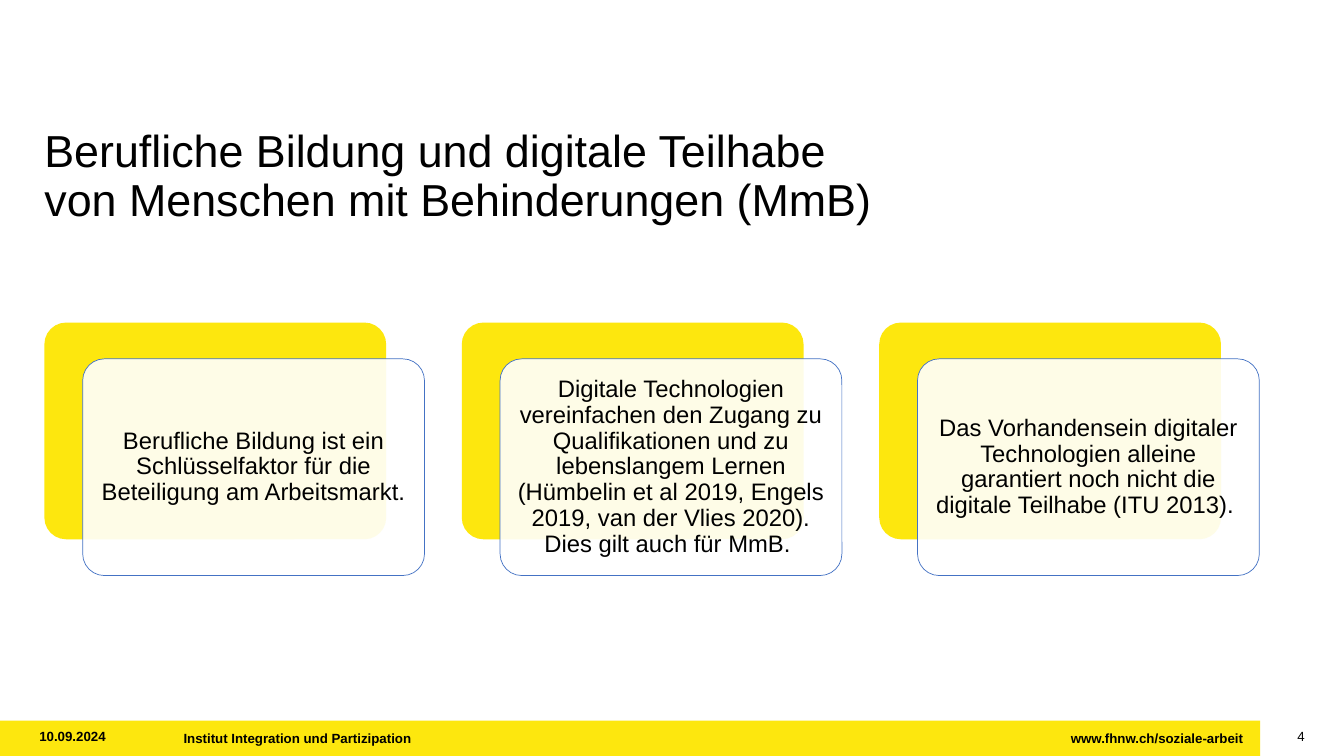
from lxml.etree import SubElement
from pptx import Presentation
from pptx.dml.color import RGBColor
from pptx.enum.shapes import MSO_SHAPE
from pptx.enum.text import MSO_ANCHOR, MSO_AUTO_SIZE, PP_ALIGN
from pptx.oxml.ns import qn
from pptx.util import Pt

EMU_PER_PX = 9144  # 100 px per inch
COLORS = {"yellow": "FDE70E", "white": "FFFFFF", "blue": "4472C4", "black": "000000"}

STATEMENTS = [
    "Berufliche Bildung ist ein Schlüsselfaktor für die Beteiligung am Arbeitsmarkt.",
    "Digitale Technologien vereinfachen den Zugang zu Qualifikationen und zu "
    "lebenslangem Lernen (Hümbelin et al 2019, Engels 2019, van der Vlies 2020). "
    "Dies gilt auch für MmB. ",
    "Das Vorhandensein digitaler Technologien alleine garantiert noch nicht die "
    "digitale Teilhabe (ITU 2013). ",
]
CARD_LEFT, CARD_TOP, CARD_PITCH = 44, 320, 414
CARD_WIDTH, CARD_HEIGHT = 339, 215
FRONT_DX, FRONT_DY = 38, 36
FOOTER_TOP, FOOTER_HEIGHT = 724, 16


def px(*lengths):
    return [length * EMU_PER_PX for length in lengths]


def rgb(name):
    return RGBColor.from_string(COLORS[name])


class SlideBuilder:
    """Holds the text style and the slide being built."""

    font = "Arial"

    def __init__(self, slide):
        self.slide = slide

    def set_text(self, shape, text, size, align=PP_ALIGN.LEFT, bold=False,
                 spacing=None, inset=0, anchor=MSO_ANCHOR.TOP):
        frame = shape.text_frame
        frame.word_wrap = True
        frame.auto_size = MSO_AUTO_SIZE.NONE
        frame.vertical_anchor = anchor
        (frame.margin_left, frame.margin_top,
         frame.margin_right, frame.margin_bottom) = px(inset, inset, inset, inset)
        paragraph = frame.paragraphs[0]
        paragraph.text = text
        paragraph.alignment = align
        paragraph.line_spacing = spacing
        paragraph.font.name = self.font
        paragraph.font.size = Pt(size)
        paragraph.font.bold = bold
        paragraph.font.color.rgb = rgb("black")

    def title(self, text, left, top, width, height):
        title = self.slide.shapes.title
        title.left, title.top, title.width, title.height = px(left, top, width, height)
        self.set_text(title, text, 32, spacing=0.9)

    def box(self, kind, fill, left, top, width, height, line=None, opacity=100):
        box = self.slide.shapes.add_shape(kind, *px(left, top, width, height))
        box.shadow.inherit = False
        box.fill.solid()
        box.fill.fore_color.rgb = rgb(fill)
        if opacity < 100:
            color = box.element.spPr.find(qn("a:solidFill"))[0]
            SubElement(color, qn("a:alpha"), val=str(opacity * 1000))
        if line:
            box.line.color.rgb = rgb(line)
            box.line.width = Pt(0.5)
        else:
            box.line.fill.background()
        return box

    def card(self, text, left, top):
        size = CARD_WIDTH, CARD_HEIGHT
        back = self.box(MSO_SHAPE.ROUNDED_RECTANGLE, "yellow", left, top, *size)
        front = self.box(MSO_SHAPE.ROUNDED_RECTANGLE, "white", left + FRONT_DX,
                         top + FRONT_DY, *size, line="blue", opacity=90)
        for layer in (back, front):
            layer.adjustments[0] = 0.1
        self.set_text(front, text, 17, PP_ALIGN.CENTER, spacing=0.9, inset=7,
                      anchor=MSO_ANCHOR.MIDDLE)

    def footer(self, text, left, width, **style):
        entry = self.slide.shapes.add_textbox(*px(left, FOOTER_TOP, width, FOOTER_HEIGHT))
        self.set_text(entry, text, 9.5, **style)


def main():
    deck = Presentation()
    deck.slide_width, deck.slide_height = px(1333, 750)
    builder = SlideBuilder(deck.slides.add_slide(deck.slide_layouts[5]))

    builder.box(MSO_SHAPE.RECTANGLE, "yellow", 0, 715, 1250, 35)
    builder.title("Berufliche Bildung und digitale Teilhabe \v"
                  "von Menschen mit Behinderungen (MmB)", 44, 128, 1204, 54)
    for column, statement in enumerate(STATEMENTS):
        builder.card(statement, CARD_LEFT + column * CARD_PITCH, CARD_TOP)

    builder.footer("10.09.2024", 39, 130, bold=True, spacing=0.9)
    builder.footer("Institut Integration und Partizipation", 182, 862, bold=True)
    builder.footer("www.fhnw.ch/soziale-arbeit", 1045, 188, bold=True, align=PP_ALIGN.RIGHT)
    builder.footer("4", 1253, 41, align=PP_ALIGN.RIGHT, spacing=0.9)
    deck.save("out.pptx")


if __name__ == "__main__":
    main()
